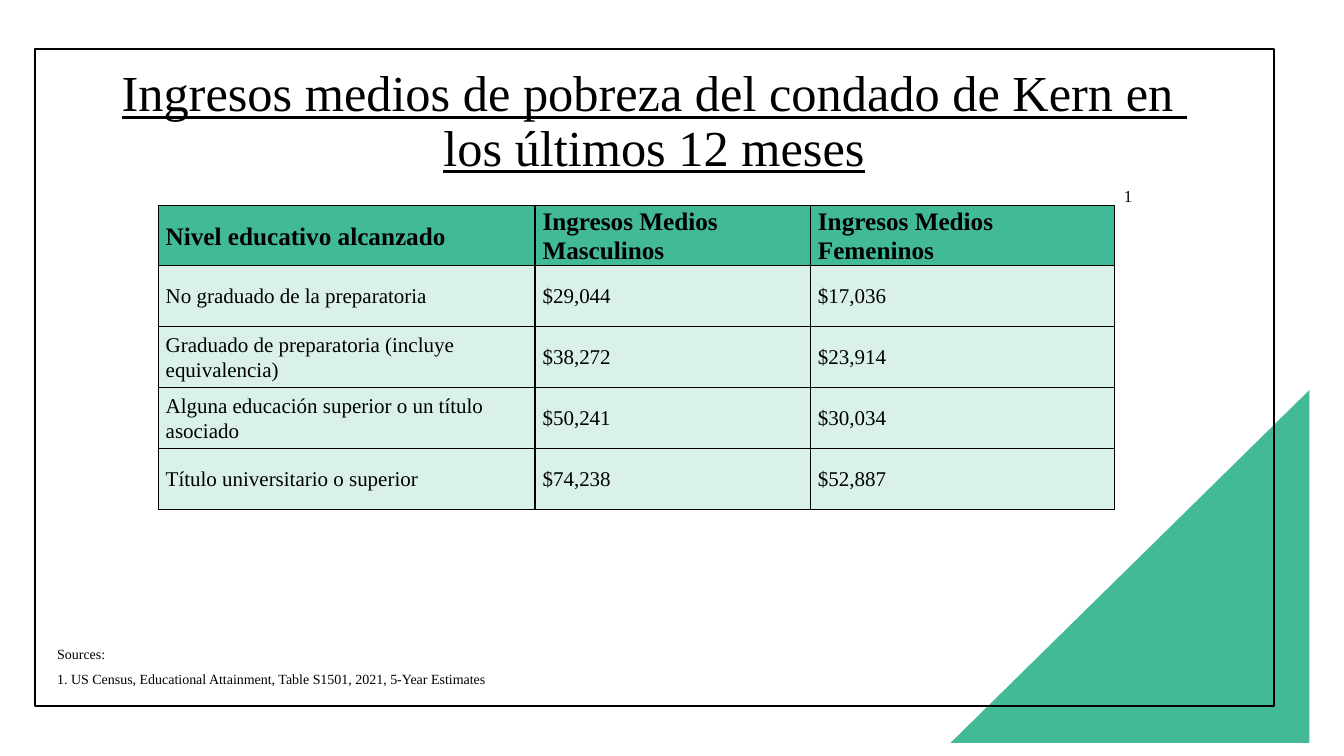
from dataclasses import dataclass

from lxml import etree
from pptx import Presentation
from pptx.dml.color import RGBColor
from pptx.enum.shapes import MSO_SHAPE
from pptx.enum.text import MSO_ANCHOR, PP_ALIGN
from pptx.oxml.ns import qn
from pptx.util import Pt

RECT = MSO_SHAPE.RECTANGLE
WEDGE = MSO_SHAPE.RIGHT_TRIANGLE
MIDDLE = MSO_ANCHOR.MIDDLE
CENTER = PP_ALIGN.CENTER
FONT = "Times New Roman"
HEX = {"ink": "000000", "green": "42BA97", "mint": "D9F1EA"}
COLS = (269.2, 196.7, 217)
HEAD_HIGH, ROW_HIGH = 38.2, 43.6
ROWS = (
    ("Nivel educativo alcanzado", "Ingresos Medios Masculinos", "Ingresos Medios Femeninos"),
    ("No graduado de la preparatoria", "$29,044", "$17,036"),
    ("Graduado de preparatoria (incluye equivalencia)", "$38,272", "$23,914"),
    ("Alguna educación superior o un título asociado", "$50,241", "$30,034"),
    ("Título universitario o superior", "$74,238", "$52,887"),
)


@dataclass
class Box:
    left: float
    top: float
    wide: float
    high: float

    def place(self) -> tuple:
        return Pt(self.left), Pt(self.top), Pt(self.wide), Pt(self.high)


@dataclass
class Note:
    box: Box
    text: str
    size: float
    lead: float
    after: float


NOTES = (
    Note(
        Box(33.8, 459.4, 480.2, 36.7),
        "Sources:\n1. US Census, Educational Attainment, Table S1501, 2021, 5-Year Estimates",
        10, Pt(10), 8,
    ),
    Note(Box(795.6, 128.9, 23, 21.6), "1", 12, 1.0, 0),
)


def color(name: str) -> RGBColor:
    return RGBColor.from_string(HEX[name])


def style(frame, size: float, lead: float, after: float = 0, bold: bool = False) -> None:
    for para in frame.paragraphs:
        para.line_spacing = lead
        para.space_before = Pt(0)
        para.space_after = Pt(after)
        for run in para.runs:
            run.font.name = FONT
            run.font.size = Pt(size)
            run.font.bold = bold
            run.font.color.rgb = color("ink")


def add_title(slide) -> None:
    title = slide.shapes.title
    title.left, title.top, title.width, title.height = Box(-9.4, 35.3, 953.3, 104.4).place()
    frame = title.text_frame
    frame.text = "Ingresos medios de pobreza del condado de Kern en \vlos últimos 12 meses"
    frame.vertical_anchor = MIDDLE
    frame.word_wrap = True
    style(frame, 36, 0.9)
    para = frame.paragraphs[0]
    para.alignment = CENTER
    for run in para.runs:
        run.font.underline = True


def add_shape(slide, kind, box: Box):
    shape = slide.shapes.add_shape(kind, *box.place())
    shape.shadow.inherit = False
    return shape


def add_wedge(slide) -> None:
    wedge = add_shape(slide, WEDGE, Box(681.1, 276.5, 252, 256.3))
    wedge.rotation = 270
    wedge.fill.solid()
    wedge.fill.fore_color.rgb = color("green")
    wedge.line.fill.background()


def add_frame(slide) -> None:
    frame = add_shape(slide, RECT, Box(25.2, 35.3, 884.9, 468.7))
    frame.fill.background()
    frame.line.color.rgb = color("ink")
    frame.line.width = Pt(1.5)


def add_note(slide, note: Note) -> None:
    frame = slide.shapes.add_textbox(*note.box.place()).text_frame
    frame.word_wrap = True
    frame.text = note.text
    style(frame, note.size, note.lead, note.after)


def add_edges(cell) -> None:
    props = cell._tc.get_or_add_tcPr()
    for spot, side in enumerate(("a:lnL", "a:lnR", "a:lnT", "a:lnB")):
        edge = etree.Element(qn(side), w=str(int(Pt(1))))
        fill = etree.SubElement(edge, qn("a:solidFill"))
        etree.SubElement(fill, qn("a:srgbClr"), val=HEX["ink"])
        props.insert(spot, edge)


def add_cell(cell, text: str, head: bool) -> None:
    cell.text = text
    cell.vertical_anchor = MIDDLE
    cell.margin_left = cell.margin_right = Pt(5.4)
    cell.margin_top = cell.margin_bottom = Pt(0)
    cell.fill.solid()
    cell.fill.fore_color.rgb = color("green" if head else "mint")
    style(cell.text_frame, 18 if head else 15, 1.07, 8, head)
    add_edges(cell)


def add_grid(slide) -> None:
    high = HEAD_HIGH + ROW_HIGH * (len(ROWS) - 1)
    box = Box(113, 146.9, sum(COLS), high)
    grid = slide.shapes.add_table(len(ROWS), len(COLS), *box.place()).table
    for col, wide in zip(grid.columns, COLS):
        col.width = Pt(wide)
    for index, texts in enumerate(ROWS):
        head = index == 0
        grid.rows[index].height = Pt(HEAD_HIGH if head else ROW_HIGH)
        for spot, text in enumerate(texts):
            add_cell(grid.cell(index, spot), text, head)


def main() -> None:
    deck = Presentation()
    deck.slide_width, deck.slide_height = Pt(960), Pt(540)
    slide = deck.slides.add_slide(deck.slide_layouts[5])
    add_wedge(slide)
    add_title(slide)
    add_grid(slide)
    add_frame(slide)
    for note in NOTES:
        add_note(slide, note)
    deck.save("out.pptx")


if __name__ == "__main__":
    main()
